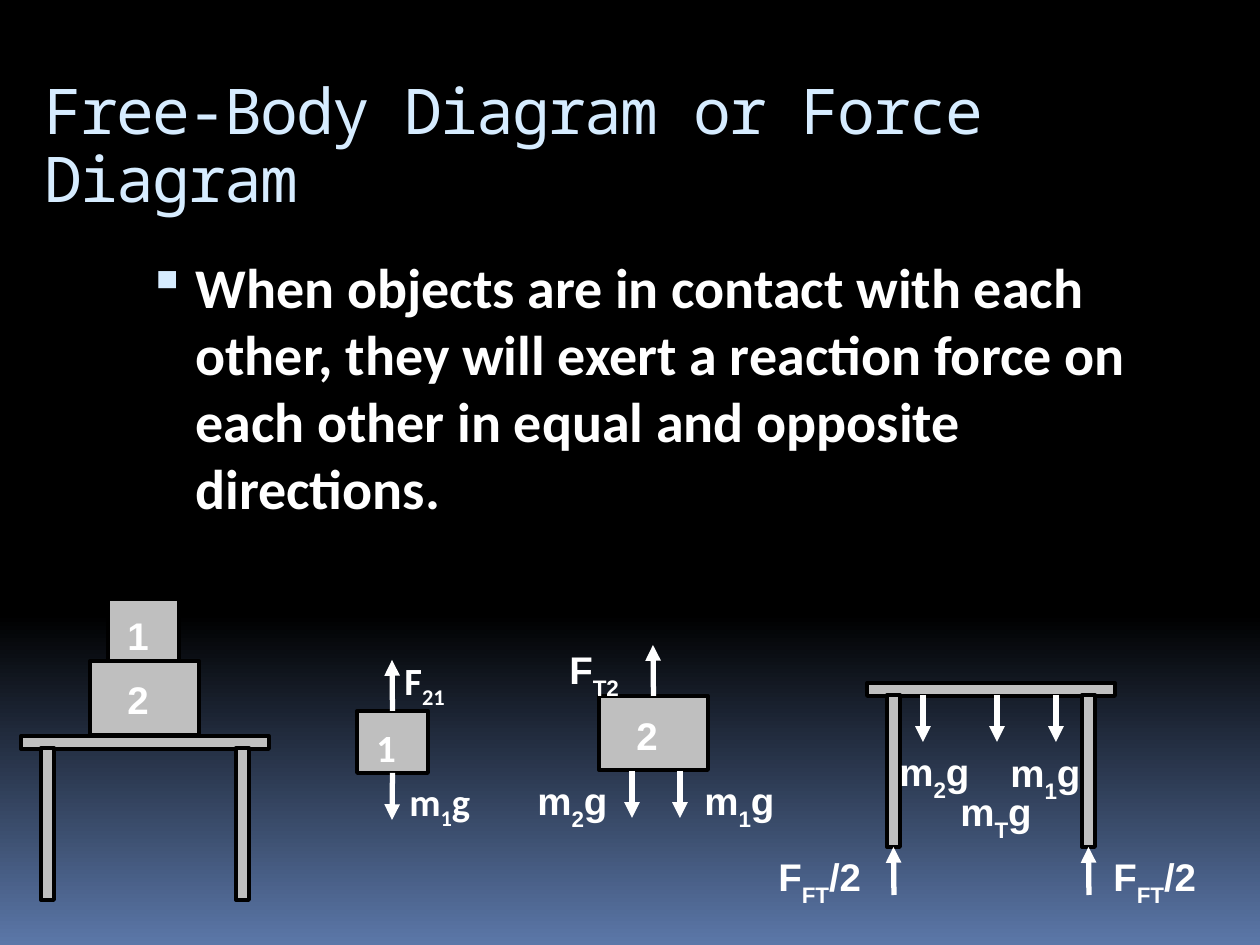
from lxml import etree
from pptx import Presentation
from pptx.dml.color import RGBColor
from pptx.enum.shapes import MSO_CONNECTOR, MSO_SHAPE
from pptx.oxml.ns import qn
from pptx.util import Emu, Pt

RECT = MSO_SHAPE.RECTANGLE
STRAIGHT = MSO_CONNECTOR.STRAIGHT
TOP, BOTTOM = 0, 2
SCALE = 914400 / 126
WHITE, BLACK, GRAY, PALE = "FFFFFF", "000000", "BFBFBF", "D6ECFF"


def px(n):
    return Emu(round(n * SCALE))


def rgb(value):
    return RGBColor.from_string(value)


class Deck:
    font = "Arial"
    size = 22
    sub = -30000

    def __init__(self):
        self.prs = Presentation()
        self.prs.slide_width, self.prs.slide_height = px(1260), px(945)
        self.s = self.prs.slides.add_slide(self.prs.slide_layouts[6])

    def background(self, stops):
        fill = self.s.background.fill
        fill.gradient()
        fill.gradient_angle = 270
        for stop, (position, color) in zip(fill.gradient_stops, stops):
            stop.position = position
            stop.color.rgb = rgb(color)

    def text(self, x, y, w, h, text, font=None, size=None, color=WHITE, bold=True):
        tf = self.s.shapes.add_textbox(px(x), px(y), px(w), px(h)).text_frame
        tf.word_wrap = True
        p = tf.paragraphs[0]
        p.font.name = font or self.font
        p.font.size = Pt(size or self.size)
        p.font.bold = bold
        p.font.color.rgb = rgb(color)
        p.add_run().text = text
        return p

    def title(self, x, y, w, h, text):
        p = self.text(x, y, w, h, text, "Noto Sans Mono", 36, PALE, False)
        p.line_spacing = 0.9
        p.runs[0].font._element.set("spc", "-100")

    def bullet(self, x, y, w, h, text):
        p = self.text(x, y, w, h, text, "Calibri", 32)
        pPr = p._p.get_or_add_pPr()
        pPr.set("marL", str(px(57)))
        pPr.set("indent", str(px(-48)))
        defaults = pPr.find(qn("a:defRPr"))
        color = etree.Element(qn("a:buClr"))
        etree.SubElement(color, qn("a:srgbClr")).set("val", PALE)
        size = etree.Element(qn("a:buSzPct"))
        size.set("val", "95000")
        mark = etree.Element(qn("a:buChar"))
        mark.set("char", "▪")
        for item in (color, size, mark):
            defaults.addprevious(item)

    def label(self, x, y, w, base, sub="", rest="", font=None):
        p = self.text(x, y, w, 56, base, font)
        if sub:
            r = p.add_run()
            r.text = sub
            r.font._element.set("baseline", str(self.sub))
        if rest:
            p.add_run().text = rest

    def box(self, x, y, w, h):
        sp = self.s.shapes.add_shape(RECT, px(x), px(y), px(w), px(h))
        sp.shadow.inherit = False
        sp.fill.solid()
        sp.fill.fore_color.rgb = rgb(GRAY)
        sp.line.color.rgb = rgb(BLACK)
        sp.line.width = Pt(2.25)
        return sp

    def table(self, x, y):
        self.box(x, y, 248, 13)
        return [self.box(x + dx, y + 12, 13, 152) for dx in (20, 215)]

    def arrow(self, x, y1, y2, begin=None, end=None):
        c = self.s.shapes.add_connector(STRAIGHT, px(x), px(y1), px(x), px(y2))
        c.line.color.rgb = rgb(WHITE)
        c.line.width = Pt(3)
        etree.SubElement(c.line._get_or_add_ln(), qn("a:tailEnd")).set("type", "triangle")
        etree.SubElement(c._element.spPr, qn("a:effectLst"))
        if begin:
            c.begin_connect(*begin)
        if end:
            c.end_connect(*end)


def main():
    d = Deck()
    d.background([(0.65, BLACK), (1, "5B77A8")])
    d.title(32, 74, 1166, 126, "Free-Body Diagram or Force Diagram")
    d.bullet(126, 246, 1071, 630,
             "When objects are in contact with each other, they will exert a "
             "reaction force on each other in equal and opposite directions.")

    d.table(21, 736)
    d.box(90, 661, 109, 74)
    d.box(108, 599, 71, 62)
    d.label(115, 606, 57, "1")
    d.label(115, 670, 57, "2")

    block1 = d.box(357, 711, 71, 62)
    d.label(364, 718, 57, "1", font="Calibri")
    d.arrow(392, 773, 820, begin=(block1, BOTTOM))
    d.arrow(392, 711, 660, begin=(block1, TOP))
    d.sub = -25000
    d.label(392, 651, 83, "F", "21", font="Calibri")
    d.label(397, 772, 97, "m", "1", "g", font="Calibri")
    d.sub = -30000

    block2 = d.box(599, 696, 109, 74)
    d.label(624, 706, 57, "2")
    for x in (632, 680):
        d.arrow(x, 771, 818)
    d.arrow(653, 696, 645, begin=(block2, TOP))
    d.label(557, 640, 83, "F", "T2")
    d.label(525, 771, 107, "m", "2", "g")
    d.label(692, 771, 117, "m", "1", "g")

    legs = d.table(867, 683)
    for x in (923, 997, 1056):
        d.arrow(x, 695, 742)
    for x, y, sub in ((887, 742, "2"), (998, 743, "1"), (948, 782, "T")):
        d.label(x, y, 114, "m", sub, "g")
    for leg, x, label_x in zip(legs, (894, 1089), (766, 1101)):
        d.arrow(x, 895, 847, end=(leg, BOTTOM))
        d.label(label_x, 847, 127, "F", "FT", "/2")

    d.prs.save("out.pptx")


if __name__ == "__main__":
    main()
